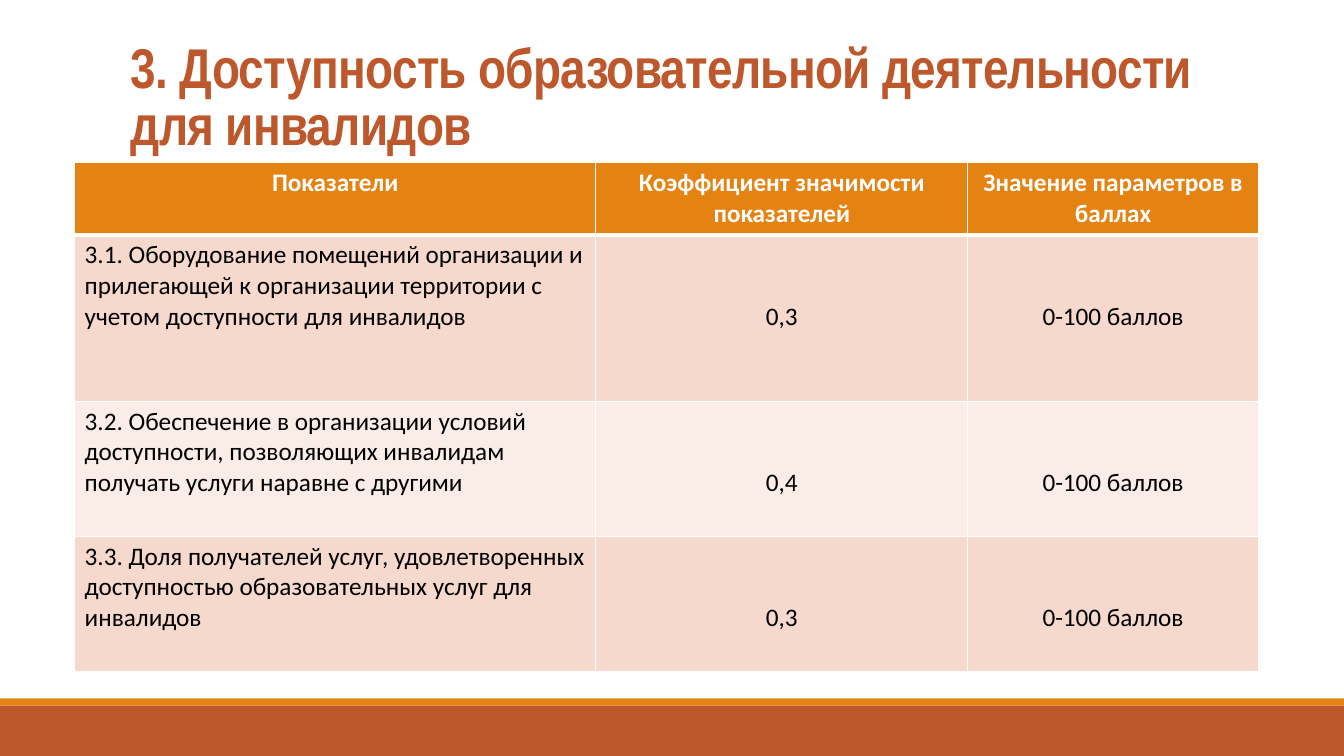
from pptx import Presentation
from pptx.dml.color import RGBColor
from pptx.enum.shapes import MSO_SHAPE
from pptx.enum.text import MSO_ANCHOR, PP_ALIGN
from pptx.oxml import parse_xml
from pptx.oxml.ns import nsdecls
from pptx.util import Inches, Pt

# Content
TITLE = "3. Доступность образовательной деятельности для инвалидов"
HEAD = ("Показатели", "Коэффициент значимости показателей", "Значение параметров в баллах")
SCORE = "0-100 баллов"
ROWS = [
    ("3.1. Оборудование помещений организации и прилегающей к организации "
     "территории с учетом доступности для инвалидов", "0,3", SCORE),
    ("3.2. Обеспечение в организации условий доступности, позволяющих "
     "инвалидам получать услуги наравне с другими", "0,4", SCORE),
    ("3.3. Доля получателей услуг, удовлетворенных доступностью "
     "образовательных услуг для инвалидов", "0,3", SCORE),
]

# Theme and layout, in inches
THEME = {
    "rust": "BD582C", "orange": "E48312", "white": "FFFFFF", "black": "000000",
    "bands": ("F5D9CC", "FAEDE7"),
    "title": ("Arial Narrow", 40), "body": ("Calibri", 18),
}
WIDE, HIGH = 13.33, 7.5
BARS = [(7, 0.5, "rust"), (6.93, 0.07, "orange")]
LEFT, TOP = 0.74, 1.61
COLS = (5.17, 3.69, 2.88)
TALL = (0.72, 1.65, 1.34, 1.34)
PAD, DROP = 0.05, 0.66  # cell top margins: normal, and two lines lower


def add_run(para, text, style, color, bold):
    run = para.add_run()
    run.text = text
    font = run.font
    font.name, size = THEME[style]
    font.size = Pt(size)
    font.bold = bold
    font.color.rgb = RGBColor.from_string(color)
    return run


def add_edge(cell, side, width):
    cell._tc.get_or_add_tcPr().append(parse_xml(
        f'<a:ln{side} {nsdecls("a")} w="{Pt(width)}"><a:solidFill>'
        f'<a:srgbClr val="{THEME["white"]}"/></a:solidFill></a:ln{side}>'))


def fill_cell(cell, text, row, col):
    head = row == 0
    for side in "LRTB":
        thick = (row, side) in ((0, "B"), (1, "T"))
        add_edge(cell, side, 3 if thick else 1)
    cell.fill.solid()
    shade = THEME["orange"] if head else THEME["bands"][(row - 1) % 2]
    cell.fill.fore_color.rgb = RGBColor.from_string(shade)
    cell.margin_top = Inches(DROP if col and not head else PAD)
    para = cell.text_frame.paragraphs[0]
    para.alignment = PP_ALIGN.CENTER if head or col else PP_ALIGN.LEFT
    add_run(para, text, "body", THEME["white" if head else "black"], head)


deck = Presentation()
deck.slide_width, deck.slide_height = Inches(WIDE), Inches(HIGH)
slide = deck.slides.add_slide(deck.slide_layouts[6])

# Bottom bars
for top, high, color in BARS:
    bar = slide.shapes.add_shape(MSO_SHAPE.RECTANGLE, 0, Inches(top), Inches(WIDE), Inches(high))
    bar.shadow.inherit = False
    bar.fill.solid()
    bar.fill.fore_color.rgb = RGBColor.from_string(THEME[color])
    bar.line.fill.background()

# Title
box = slide.shapes.add_textbox(Inches(1.2), Inches(0.31), Inches(11), Inches(1.3))
frame = box.text_frame
frame.word_wrap = True
frame.vertical_anchor = MSO_ANCHOR.BOTTOM
para = frame.paragraphs[0]
para.line_spacing = 0.85
run = add_run(para, TITLE, "title", THEME["rust"], True)
run._r.get_or_add_rPr().set("spc", "-50")

# Table
table = slide.shapes.add_table(
    len(TALL), len(COLS), Inches(LEFT), Inches(TOP),
    Inches(sum(COLS)), Inches(sum(TALL))).table
for col, wide in enumerate(COLS):
    table.columns[col].width = Inches(wide)
for row, (high, texts) in enumerate(zip(TALL, [HEAD, *ROWS])):
    table.rows[row].height = Inches(high)
    for col, text in enumerate(texts):
        fill_cell(table.cell(row, col), text, row, col)

deck.save("out.pptx")
